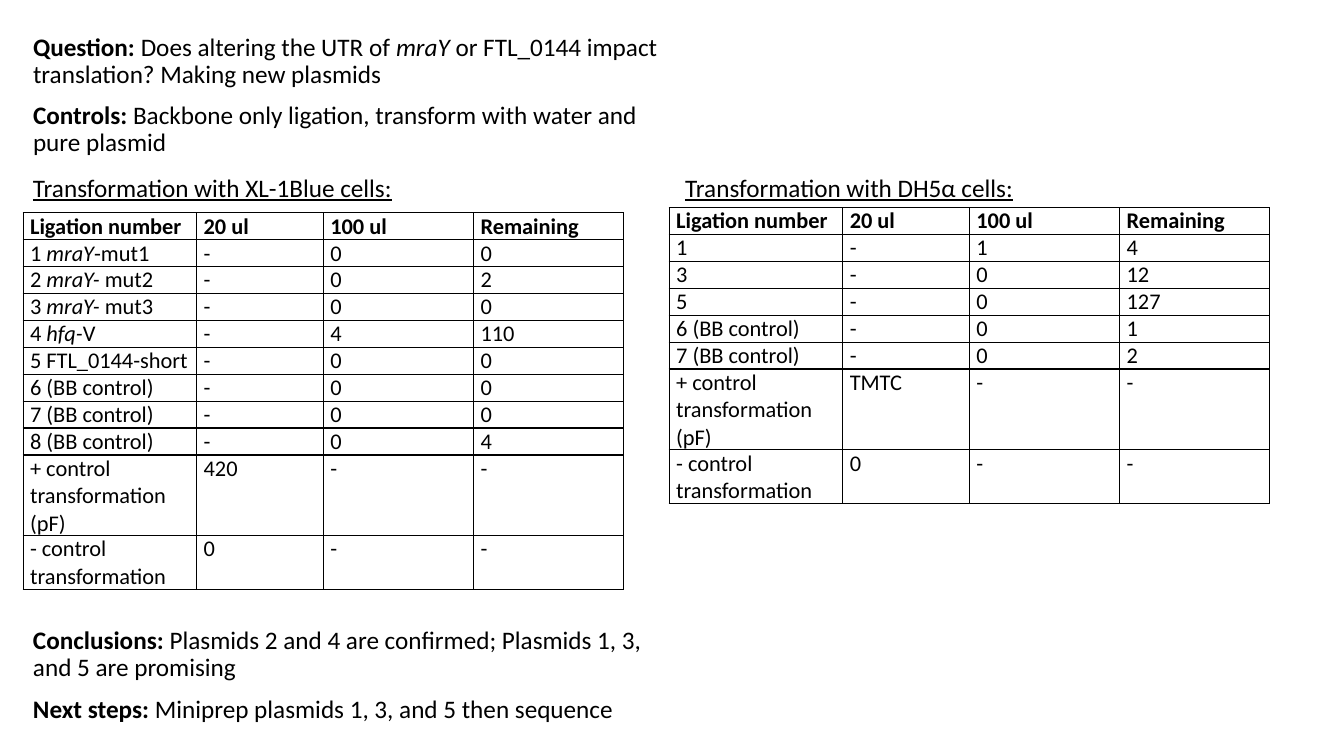
from dataclasses import dataclass

from lxml.etree import SubElement
from pptx import Presentation
from pptx.dml.color import RGBColor
from pptx.oxml.ns import qn
from pptx.util import Pt


@dataclass(frozen=True)
class Theme:
    font: str = "Calibri"
    ink: str = "000000"
    body: float = 18
    cell: float = 16
    border: float = 1
    line_spacing: float = 0.9
    para_gap: float = 10
    cell_pad: float = 5
    row: float = 19.2


class SlideBuilder:
    def __init__(self, slide, theme):
        self.slide = slide
        self.theme = theme

    def fill_text(self, p, text, size, label="", bold=False, underline=False):
        """Fill a paragraph: a bold label, then text with *italic* spans."""
        f = p.font
        f.name, f.size = self.theme.font, Pt(size)
        f.color.rgb = RGBColor.from_string(self.theme.ink)
        f.bold, f.underline = bold, underline
        if label:
            r = p.add_run()
            r.text = label + " "
            r.font.bold = True
        for i, part in enumerate(text.split("*")):
            if part:
                r = p.add_run()
                r.text = part
                if i % 2:
                    r.font.italic = True

    def text_frame(self, x, y, w, h):
        tf = self.slide.shapes.add_textbox(Pt(x), Pt(y), Pt(w), Pt(h)).text_frame
        tf.word_wrap = True
        return tf

    def notes(self, x, y, w, h, items):
        """Add a box of labelled paragraphs."""
        tf = self.text_frame(x, y, w, h)
        for i, (label, text) in enumerate(items):
            p = tf.add_paragraph() if i else tf.paragraphs[0]
            p.line_spacing = self.theme.line_spacing
            if i:
                p.space_before = Pt(self.theme.para_gap)
            self.fill_text(p, text, self.theme.body, label=label)

    def heading(self, x, y, w, h, text):
        p = self.text_frame(x, y, w, h).paragraphs[0]
        self.fill_text(p, text, self.theme.body, underline=True)

    def borders(self, cell):
        tcPr = cell._tc.get_or_add_tcPr()
        for side in ("lnL", "lnR", "lnT", "lnB"):
            ln = SubElement(tcPr, qn(f"a:{side}"), w=str(Pt(self.theme.border)))
            fill = SubElement(ln, qn("a:solidFill"))
            SubElement(fill, qn("a:srgbClr"), val=self.theme.ink)

    def table(self, x, y, widths, rows, line_counts):
        """Add a bordered table; line_counts gives the text lines of each row."""
        t = self.theme
        heights = [t.row * n for n in line_counts]
        tbl = self.slide.shapes.add_table(
            len(rows), len(widths), Pt(x), Pt(y), Pt(sum(widths)), Pt(sum(heights))
        ).table
        tbl.horz_banding = False
        tbl.first_row = False
        for col, w in zip(tbl.columns, widths):
            col.width = Pt(w)
        for i, (row, h) in enumerate(zip(rows, heights)):
            tbl.rows[i].height = Pt(h)
            for j, text in enumerate(row):
                cell = tbl.cell(i, j)
                cell.margin_left = cell.margin_right = Pt(t.cell_pad)
                cell.margin_top = cell.margin_bottom = 0
                self.borders(cell)
                cell.fill.background()
                self.fill_text(cell.text_frame.paragraphs[0], text, t.cell, bold=i == 0)


LEFT = 16.5
COLUMNS = (124, 90.5, 107.3, 107.3)
HEADER = ("Ligation number", "20 ul", "100 ul", "Remaining")

XL1_LIGATIONS = [
    ("1 *mraY*-mut1", "-", "0", "0"),
    ("2 *mraY- *mut2", "-", "0", "2"),
    ("3 *mraY- *mut3", "-", "0", "0"),
    ("4 *hfq-*V", "-", "4", "110"),
    ("5 FTL_0144-short", "-", "0", "0"),
    ("6 (BB control)", "-", "0", "0"),
    ("7 (BB control)", "-", "0", "0"),
    ("8 (BB control)", "-", "0", "4"),
]
DH5_LIGATIONS = [
    ("1", "-", "1", "4"),
    ("3", "-", "0", "12"),
    ("5", "-", "0", "127"),
    ("6 (BB control)", "-", "0", "1"),
    ("7 (BB control)", "-", "0", "2"),
]
# heading, heading x, table x, table y, ligations, positive control count
TRANSFORMATIONS = [
    ("Transformation with XL-1Blue cells:", LEFT, LEFT, 152, XL1_LIGATIONS, "420"),
    ("Transformation with DH5α cells:", 482.4, 478, 148.3, DH5_LIGATIONS, "TMTC"),
]


def main():
    prs = Presentation()
    prs.slide_width, prs.slide_height = Pt(960), Pt(540)
    s = SlideBuilder(prs.slides.add_slide(prs.slide_layouts[6]), Theme())

    s.notes(LEFT, 21, 473.8, 147, [
        ("Question:", "Does altering the UTR of *mraY *or FTL_0144 impact "
                      "translation? Making new plasmids"),
        ("Controls:", "Backbone only ligation, transform with water and pure plasmid"),
    ])
    s.notes(LEFT, 445, 463, 106.5, [
        ("Conclusions:", "Plasmids 2 and 4 are confirmed; Plasmids 1, 3, and 5 are promising"),
        ("Next steps:", "Miniprep plasmids 1, 3, and 5 then sequence"),
    ])
    for title, title_x, x, y, ligations, positive in TRANSFORMATIONS:
        s.heading(title_x, 119.5, 374.4, 29, title)
        controls = [
            ("+ control transformation (pF)", positive, "-", "-"),
            ("- control transformation", "0", "-", "-"),
        ]
        line_counts = [1] * (len(ligations) + 1) + [3, 2]
        s.table(x, y, COLUMNS, [HEADER, *ligations, *controls], line_counts)

    prs.save("out.pptx")


if __name__ == "__main__":
    main()
